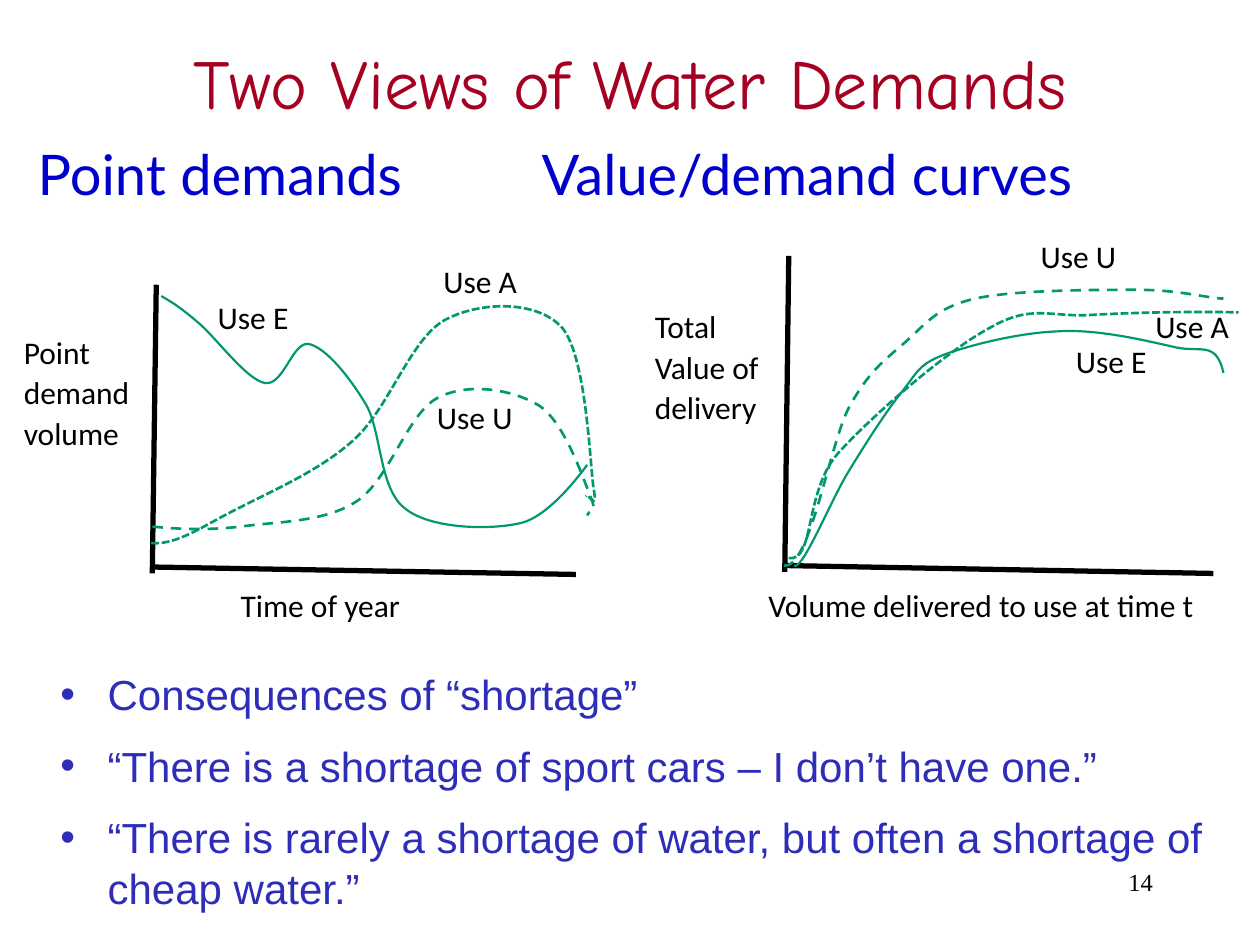
from dataclasses import dataclass

from lxml.etree import SubElement
from pptx import Presentation
from pptx.dml.color import RGBColor
from pptx.enum.dml import MSO_LINE
from pptx.enum.shapes import MSO_CONNECTOR
from pptx.enum.text import MSO_ANCHOR, PP_ALIGN
from pptx.oxml.ns import qn
from pptx.util import Cm, Pt


@dataclass(frozen=True)
class Theme:
    black: RGBColor = RGBColor(0x00, 0x00, 0x00)
    title: RGBColor = RGBColor(0xA5, 0x00, 0x21)
    heading: RGBColor = RGBColor(0x00, 0x00, 0xCC)
    bullet: RGBColor = RGBColor(0x2D, 0x2D, 0xB9)
    curve: RGBColor = RGBColor(0x00, 0x97, 0x71)
    title_size: int = 40
    heading_size: int = 32
    bullet_size: int = 24
    label_size: int = 18
    number_size: int = 14


THEME = Theme()
GRID = Cm(0.0254)  # curve points lie on a grid of 1/100 inch

# Labels: text, left, top, width, height in cm. Axes: x1, y1, x2, y2 in cm.
# Curves: width in pt, dash, then x, y pairs on the grid: a start point
# followed by three Bézier points for each segment.
POINT_DEMANDS = {
    "axes": [(3.15, 5.74, 3.07, 11.56), (3.05, 11.43, 11.61, 11.58)],
    "curves": [
        (1.25, None, [
            128, 235, 135, 239, 142, 243, 156, 255, 170, 266, 195, 301, 210, 304,
            225, 307, 232, 271, 245, 273, 259, 276, 278, 300, 291, 322,
            303, 344, 301, 389, 322, 404, 342, 420, 390, 421, 414, 415,
            438, 409, 466, 369, 466, 369]),
        (1.5, MSO_LINE.DASH, [
            121, 418, 142, 420, 164, 421, 191, 418, 218, 414, 257, 415, 283, 398,
            309, 381, 323, 329, 347, 316, 371, 303, 407, 309, 428, 322,
            448, 335, 463, 380, 469, 395, 475, 409, 467, 404, 466, 409]),
        (1.5, MSO_LINE.SQUARE_DOT, [
            120, 431, 141, 433, 163, 416, 190, 403, 217, 389, 255, 373, 282, 348,
            309, 323, 326, 269, 353, 254, 381, 239, 426, 238, 446, 260,
            465, 282, 468, 364, 471, 387, 475, 409, 466, 389, 465, 394]),
    ],
    "labels": [
        ("Point demand volume", 0.23, 6.53, 3.02, 3.1),
        ("Time of year", 4.6, 11.63, 3.89, 1.32),
        ("Use A", 8.69, 5.11, 2.29, 1.3),
        ("Use E", 4.14, 5.84, 2.29, 1.3),
        ("Use U", 8.56, 7.85, 2.29, 1.3),
    ],
}
VALUE_CURVES = {
    "axes": [(15.9, 5.16, 15.82, 11.53), (15.8, 11.4, 24.46, 11.56)],
    "curves": [
        (1.25, None, [
            630, 449, 637, 453, 659, 398, 673, 375, 687, 352, 703, 327, 715, 312,
            728, 296, 728, 290, 748, 282, 769, 274, 809, 264, 840, 263,
            870, 261, 908, 270, 930, 275, 952, 281, 965, 269, 971, 296]),
        (1.5, MSO_LINE.DASH, [
            622, 449, 643, 452, 658, 353, 674, 323, 690, 294, 702, 286, 718, 272,
            735, 257, 743, 244, 774, 237, 805, 230, 870, 230, 903, 230,
            936, 230, 960, 237, 971, 237]),
        (1.5, MSO_LINE.SQUARE_DOT, [
            626, 443, 647, 446, 638, 391, 665, 360, 692, 330, 752, 278, 786, 260,
            819, 241, 834, 252, 866, 250, 899, 248, 953, 247, 983, 248]),
    ],
    "labels": [
        ("Total Value of delivery", 12.95, 6.02, 3.05, 3.4),
        ("Volume delivered to use at time t", 15.24, 11.63, 9.58, 1.45),
        ("Use A", 23.04, 6.02, 2.31, 1.42),
        ("Use E", 21.44, 6.71, 2.31, 1.42),
        ("Use U", 20.73, 4.6, 2.31, 1.42),
    ],
}
BULLETS = [
    "Consequences of “shortage”",
    "“There is a shortage of sport cars – I don’t have one.”",
    "“There is rarely a shortage of water, but often a shortage of cheap water.”",
]


def style(p, font, size, color):
    for r in p.runs:
        r.font.name = font
        r.font.size = Pt(size)
        r.font.color.rgb = color


def add_text(shapes, text, box, font, size, color):
    """Add a wrapping text box and return its first paragraph."""
    tf = shapes.add_textbox(*map(Cm, box)).text_frame
    tf.word_wrap = True
    p = tf.paragraphs[0]
    p.text = text
    style(p, font, size, color)
    return p


def add_title(s, text):
    sp = s.shapes.title
    sp.left, sp.top, sp.width, sp.height = Cm(0), Cm(0.58), Cm(25.4), Cm(2.11)
    tf = sp.text_frame
    tf.text = text
    tf.vertical_anchor = MSO_ANCHOR.MIDDLE
    p = tf.paragraphs[0]
    p.alignment = PP_ALIGN.CENTER
    style(p, "Comic Neue", THEME.title_size, THEME.title)


def add_axis(shapes, ends):
    sp = shapes.add_connector(MSO_CONNECTOR.STRAIGHT, *map(Cm, ends))
    sp.line.color.rgb = THEME.black
    sp.line.width = Pt(3)
    SubElement(sp._element.spPr, qn("a:effectLst"))


def add_curve(shapes, width, dash, coords):
    """Draw the points as a freeform, then join each three lines into a Bézier."""
    start, *points = zip(coords[::2], coords[1::2])
    builder = shapes.build_freeform(*start, scale=GRID)
    builder.add_line_segments(points, close=False)
    sp = builder.convert_to_shape()
    sp.shadow.inherit = False
    sp.fill.background()
    sp.line.color.rgb = THEME.curve
    sp.line.width = Pt(width)
    if dash:
        sp.line.dash_style = dash

    outline = next(sp._element.iter(qn("a:path")))
    lines = outline.findall(qn("a:lnTo"))
    for i in range(0, len(lines), 3):
        bezier = SubElement(outline, qn("a:cubicBezTo"))
        for line in lines[i:i + 3]:
            bezier.append(line[0])
            outline.remove(line)


def add_graph(s, graph):
    shapes = s.shapes.add_group_shape().shapes
    for ends in graph["axes"]:
        add_axis(shapes, ends)
    for curve in graph["curves"]:
        add_curve(shapes, *curve)
    for text, *box in graph["labels"]:
        p = add_text(shapes, text, box, "Calibri", THEME.label_size, THEME.black)
        p.line_spacing = 1.07
        p.space_after = Pt(8)


def add_bullets(s, items, box):
    tf = s.shapes.add_textbox(*map(Cm, box)).text_frame
    tf.word_wrap = True
    for i, item in enumerate(items):
        p = tf.add_paragraph() if i else tf.paragraphs[0]
        p.text = item
        style(p, "Arial", THEME.bullet_size, THEME.bullet)
        if i:
            p.space_before = Pt(12)
        pPr = p._p.get_or_add_pPr()
        pPr.set("marL", str(Cm(0.95)))
        pPr.set("indent", str(-Cm(0.95)))
        SubElement(pPr, qn("a:buFont"), typeface="Arial")
        SubElement(pPr, qn("a:buChar"), char="•")


def main():
    prs = Presentation()
    prs.slide_width, prs.slide_height = Cm(25.4), Cm(19.05)
    s = prs.slides.add_slide(prs.slide_layouts[5])

    number = add_text(s.shapes, "14", (18.21, 17.35, 5.28, 1.27),
                      "Times New Roman", THEME.number_size, THEME.black)
    number.alignment = PP_ALIGN.RIGHT
    add_title(s, "Two Views of Water Demands")
    heading = add_text(s.shapes, "Point demands\t\t\tValue/demand curves",
                       (0.51, 2.69, 24.89, 1.93),
                       "Lato", THEME.heading_size, THEME.heading)
    heading.space_before = Pt(18)
    for graph in (POINT_DEMANDS, VALUE_CURVES):
        add_graph(s, graph)
    add_bullets(s, BULLETS, (0.97, 13.36, 23.65, 5.69))
    prs.save("out.pptx")


if __name__ == "__main__":
    main()
